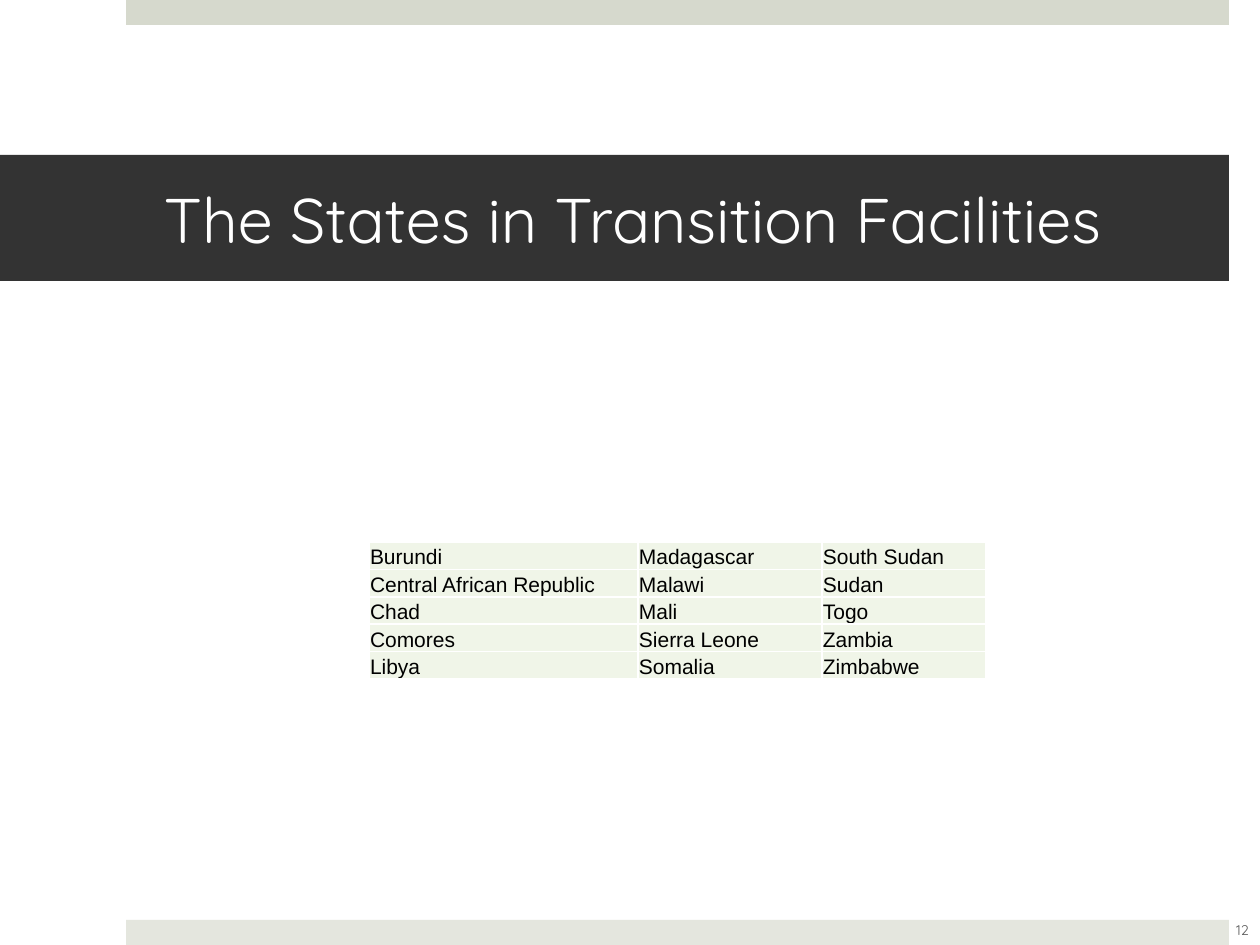
from lxml.etree import SubElement
from pptx import Presentation
from pptx.dml.color import RGBColor
from pptx.enum.shapes import MSO_SHAPE as Shape
from pptx.enum.text import MSO_ANCHOR as Anchor, PP_ALIGN as Align
from pptx.oxml.ns import qn
from pptx.util import Pt

EMU_PER_PX = 914400 / 126
COLORS = {
    "top_bar": "D6D9CD",
    "bottom_bar": "E4E6DE",
    "title_band": "333333",
    "title_text": "FFFFFF",
    "cell": "F0F5E8",
    "cell_text": "000000",
    "border": "FFFFFF",
    "page_number": "595959",
}
COUNTRIES = [
    ["Burundi", "Madagascar", "South Sudan"],
    ["Central African Republic", "Malawi", "Sudan"],
    ["Chad", "Mali", "Togo"],
    ["Comores", "Sierra Leone", "Zambia"],
    ["Libya", "Somalia", "Zimbabwe"],
]
COLUMN_WIDTHS = [269, 184, 164]


def px(length):
    """Turn whole pixels into EMU."""
    return round(length * EMU_PER_PX)


def color(name):
    """Return the named colour."""
    return RGBColor.from_string(COLORS[name])


def set_values(target, values):
    """Set each attribute of the target from a dict."""
    for name, value in values.items():
        setattr(target, name, value)


def set_margins(target, left, top, right, bottom):
    """Set the inner margins of a text frame or cell."""
    set_values(target, {
        "margin_left": px(left), "margin_top": px(top),
        "margin_right": px(right), "margin_bottom": px(bottom),
    })


def write_text(frame, text, font, size, color_name, align=Align.LEFT):
    """Write one formatted paragraph."""
    paragraph = frame.paragraphs[0]
    paragraph.alignment = align
    run = paragraph.add_run()
    run.text = text
    set_values(run.font, {"name": font, "size": Pt(size), "bold": False})
    run.font.color.rgb = color(color_name)


def add_bar(slide, left, top, width, height, color_name):
    """Add a plain filled rectangle."""
    shape = slide.shapes.add_shape(
        Shape.RECTANGLE, px(left), px(top), px(width), px(height))
    shape.shadow.inherit = False
    shape.fill.solid()
    shape.fill.fore_color.rgb = color(color_name)
    shape.line.fill.background()
    return shape


def add_title(slide, text):
    """Add the dark band that holds the title."""
    frame = add_bar(slide, 0, 155, 1229, 126, "title_band").text_frame
    set_values(frame, {"word_wrap": True, "vertical_anchor": Anchor.MIDDLE})
    set_margins(frame, 164, 6, 38, 6)
    write_text(frame, text, "Quicksand", 36, "title_text")


def add_borders(cell):
    """Draw thin lines on all sides of a cell, ahead of its fill."""
    properties = cell._tc.get_or_add_tcPr()
    for index, side in enumerate(("lnL", "lnR", "lnT", "lnB")):
        line = SubElement(properties, qn(f"a:{side}"), w=str(Pt(1)))
        fill = SubElement(line, qn("a:solidFill"))
        SubElement(fill, qn("a:srgbClr"), val=COLORS["border"])
        properties.insert(index, line)


def add_country_table(slide, left, top, height):
    """Add the table of countries with equal rows."""
    table = slide.shapes.add_table(
        len(COUNTRIES), len(COLUMN_WIDTHS), px(left), px(top),
        px(sum(COLUMN_WIDTHS)), px(height)).table
    set_values(table, {"first_row": False, "horz_banding": False})
    for column, width in zip(table.columns, COLUMN_WIDTHS):
        column.width = px(width)
    for row, names in zip(table.rows, COUNTRIES):
        for cell, name in zip(row.cells, names):
            cell.vertical_anchor = Anchor.BOTTOM
            set_margins(cell, 1, 1, 1, 0)
            cell.fill.solid()
            cell.fill.fore_color.rgb = color("cell")
            add_borders(cell)
            write_text(cell.text_frame, name, "Arial", 12, "cell_text")


def add_page_number(slide, text):
    """Add the page number in the corner."""
    frame = slide.shapes.add_textbox(px(1211), px(905), px(63), px(50)).text_frame
    set_values(frame, {"word_wrap": True, "vertical_anchor": Anchor.MIDDLE})
    write_text(frame, text, "Quicksand", 8, "page_number", Align.CENTER)


def main():
    """Build the slide and save it."""
    presentation = Presentation()
    set_values(presentation, {"slide_width": px(1260), "slide_height": px(945)})
    slide = presentation.slides.add_slide(presentation.slide_layouts[6])
    add_bar(slide, 126, 0, 1103, 25, "top_bar")
    add_bar(slide, 126, 920, 1103, 25, "bottom_bar")
    add_title(slide, "The States in Transition Facilities")
    add_country_table(slide, 369, 542, 137)
    add_page_number(slide, "12")
    presentation.save("out.pptx")


if __name__ == "__main__":
    main()
